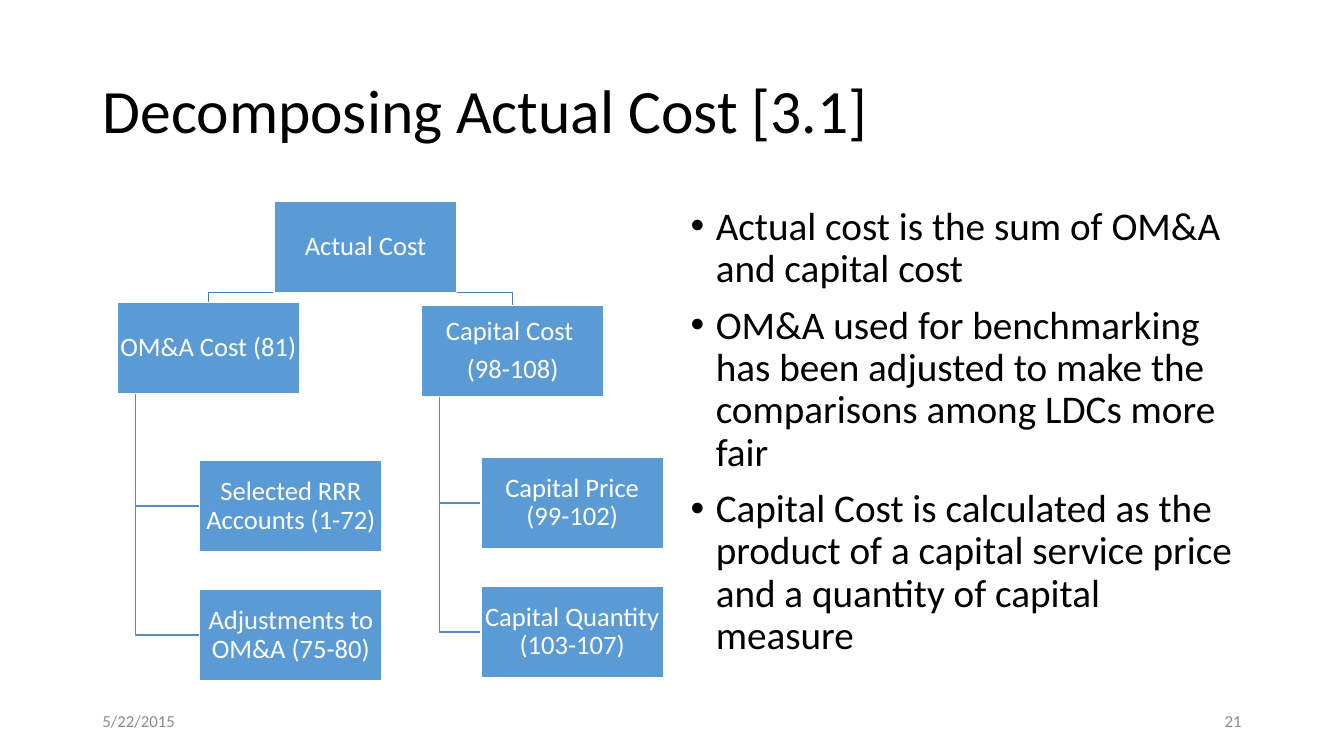
from pptx import Presentation
from pptx.dml.color import RGBColor
from pptx.enum.shapes import MSO_SHAPE as Shape
from pptx.enum.text import MSO_ANCHOR as Anchor, MSO_AUTO_SIZE as AutoSize, PP_ALIGN as Align
from pptx.util import Cm, Pt

BLACK = RGBColor(0x00, 0x00, 0x00)
WHITE = RGBColor(0xFF, 0xFF, 0xFF)
GREY = RGBColor(0x8C, 0x8C, 0x8C)
BLUE = RGBColor(0x5B, 0x9B, 0xD5)
TOP_BRANCH = RGBColor(0x49, 0x7C, 0xAB)
LOW_BRANCH = RGBColor(0x53, 0x8D, 0xC1)

BOX_WIDTH, BOX_HEIGHT = 4.6, 2.29
HANG_INSET = BOX_WIDTH / 10
ROW_STEP = 3.25


class CostSlide:
    """Holds the style and the current page; lengths are in centimetres."""

    font = "Calibri"

    def __init__(self, deck):
        self.page = deck.slides.add_slide(deck.slide_layouts[1])

    def set_text(self, frame, lines, size, color, align=Align.LEFT, spacing=0.9, before=0, after=0):
        frame.word_wrap = True
        frame.auto_size = AutoSize.NONE
        frame.text = "\n".join(lines)
        for para in frame.paragraphs:
            para.alignment = align
            para.line_spacing = spacing
            para.space_before, para.space_after = Pt(before), Pt(after)
            para.font.name, para.font.size = self.font, Pt(size)
            para.font.color.rgb = color

    def place(self, holder, left, top, width, height):
        holder.left, holder.top = Cm(left), Cm(top)
        holder.width, holder.height = Cm(width), Cm(height)

    def title(self, text, *area):
        holder = self.page.shapes.title
        self.place(holder, *area)
        self.set_text(holder.text_frame, [text], 44, BLACK)
        holder.text_frame.vertical_anchor = Anchor.MIDDLE

    def bullets(self, lines, *area):
        holder = self.page.placeholders[1]
        self.place(holder, *area)
        self.set_text(holder.text_frame, lines, 28, BLACK, before=10)
        for para in holder.text_frame.paragraphs:
            properties = para._p.get_or_add_pPr()
            properties.set("marL", str(Cm(0.635)))
            properties.set("indent", str(-Cm(0.635)))

    def box(self, lines, left, top):
        box = self.page.shapes.add_shape(
            Shape.RECTANGLE, Cm(left), Cm(top), Cm(BOX_WIDTH), Cm(BOX_HEIGHT))
        box.shadow.inherit = False
        box.fill.solid()
        box.fill.fore_color.rgb = BLUE
        box.line.color.rgb = WHITE
        box.line.width = Pt(1)
        frame = box.text_frame
        frame.margin_left = frame.margin_right = Cm(0.03)
        frame.margin_top = frame.margin_bottom = Cm(0.03)
        frame.vertical_anchor = Anchor.MIDDLE
        self.set_text(frame, lines, 19, WHITE, Align.CENTER, after=6.65)

    def branch(self, points, color):
        start, *rest = [(Cm(x), Cm(y)) for x, y in points]
        builder = self.page.shapes.build_freeform(*start)
        builder.add_line_segments(rest, close=False)
        line = builder.convert_to_shape()
        line.shadow.inherit = False
        line.fill.background()
        line.line.color.rgb = color
        line.line.width = Pt(1)

    def footer(self, text, left, align):
        box = self.page.shapes.add_textbox(Cm(left), Cm(17.65), Cm(7.62), Cm(1.01))
        box.text_frame.vertical_anchor = Anchor.MIDDLE
        self.set_text(box.text_frame, [text], 12, GREY, align, spacing=1)


def main():
    deck = Presentation()
    deck.slide_width, deck.slide_height = Cm(33.87), Cm(19.05)
    slide = CostSlide(deck)

    # Title and explanation
    slide.title("Decomposing Actual Cost [3.1]", 2.33, 1.01, 29.21, 3.68)
    slide.bullets([
        "Actual cost is the sum of OM&A and capital cost",
        "OM&A used for benchmarking has been adjusted to make the "
        "comparisons among LDCs more fair",
        "Capital Cost is calculated as the product of a capital service "
        "price and a quantity of capital measure",
    ], 17.15, 5.08, 14.4, 12.09)

    # Cost tree: each group is a head box and the column of boxes below it
    root = (6.91, 5.08)
    groups = [
        (["OM&A Cost (81)"], (2.95, 7.62), (5.03, 11.61),
         ["Selected RRR Accounts (1-72)", "Adjustments to OM&A (75-80)"]),
        (["Capital Cost ", "(98-108)"], (10.62, 7.7), (12.12, 11.53),
         ["Capital Price (99-102)", "Capital Quantity (103-107)"]),
    ]

    # Branches, behind the boxes
    root_x, root_y = root[0] + BOX_WIDTH / 2, root[1] + BOX_HEIGHT
    for _, (left, top), (column, first_row), parts in groups:
        middle = left + BOX_WIDTH / 2
        slide.branch([(root_x, root_y), (middle, root_y), (middle, top)], TOP_BRANCH)
        hang = left + HANG_INSET
        for row in range(len(parts)):
            level = first_row + row * ROW_STEP + BOX_HEIGHT / 2
            slide.branch([(hang, top + BOX_HEIGHT), (hang, level), (column, level)], LOW_BRANCH)

    # Boxes
    slide.box(["Actual Cost"], *root)
    for head, corner, (column, first_row), parts in groups:
        slide.box(head, *corner)
        for row, part in enumerate(parts):
            slide.box([part], column, first_row + row * ROW_STEP)

    # Footer
    slide.footer("5/22/2015", 2.33, Align.LEFT)
    slide.footer("21", 23.92, Align.RIGHT)

    deck.save("out.pptx")


if __name__ == "__main__":
    main()
